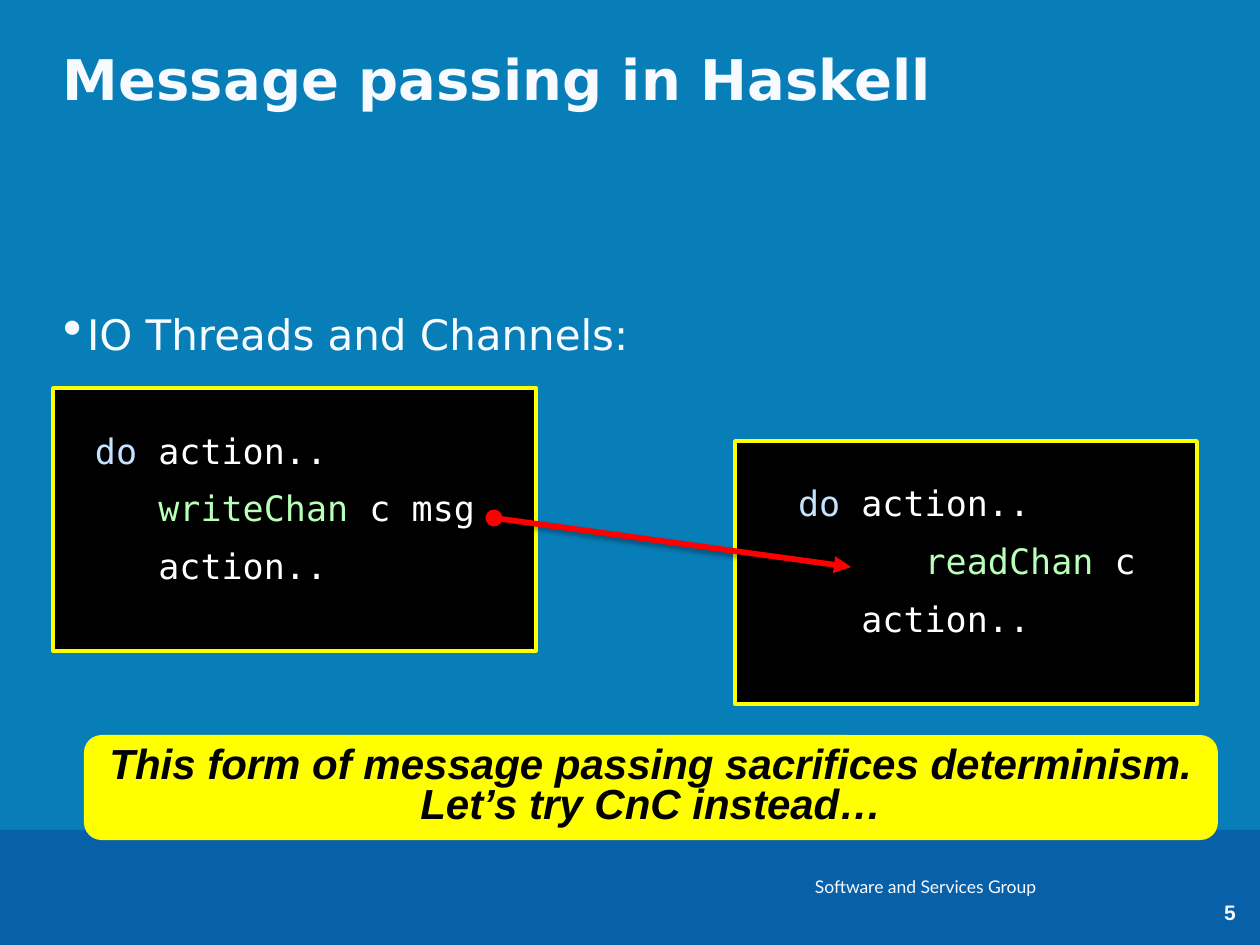
from lxml import etree
from pptx import Presentation
from pptx.dml.color import RGBColor
from pptx.enum.shapes import MSO_CONNECTOR, MSO_SHAPE
from pptx.enum.text import MSO_ANCHOR, PP_ALIGN
from pptx.oxml.ns import qn
from pptx.util import Emu, Pt

RECTANGLE, ROUNDED = MSO_SHAPE.RECTANGLE, MSO_SHAPE.ROUNDED_RECTANGLE
STRAIGHT = MSO_CONNECTOR.STRAIGHT
LEFT, CENTER = PP_ALIGN.LEFT, PP_ALIGN.CENTER
TOP, MIDDLE, BOTTOM = MSO_ANCHOR.TOP, MSO_ANCHOR.MIDDLE, MSO_ANCHOR.BOTTOM

EMU_PER_PX = 914400 / 126
SLIDE_WIDTH, SLIDE_HEIGHT = 1260, 945
COLORS = {
    "background": "087EB9", "band": "0860A8", "text": "F7FBFF",
    "black": "000000", "white": "FFFFFF", "yellow": "FFFF00",
    "red": "FF0000", "keyword": "C5E2FF", "function": "B8FFB8",
}
SANS, MONO = "DejaVu Sans", "DejaVu Sans Mono"


def px(length):
    return Emu(round(length * EMU_PER_PX))


def rgb(name):
    return RGBColor.from_string(COLORS[name])


def add_element(parent, tag, **attributes):
    element = etree.SubElement(parent, qn(tag))
    for name, value in attributes.items():
        element.set(name, str(value))
    return element


def add_box(slide, box, preset, fill, line=None):
    shape = slide.shapes.add_shape(preset, *map(px, box))
    shape.shadow.inherit = False
    shape.fill.solid()
    shape.fill.fore_color.rgb = rgb(fill)
    if line:
        shape.line.color.rgb = rgb(line)
        shape.line.width = Pt(2)
    else:
        shape.line.fill.background()
    return shape


def add_text_box(slide, box, text, **formats):
    shape = slide.shapes.add_textbox(*map(px, box))
    write_text(shape, [[(text, "text")]], **formats)
    return shape


def write_text(shape, lines, font=SANS, size=24, bold=False, italic=False,
               align=LEFT, anchor=TOP, insets=(0, 0, 0, 0), wrap=True,
               space_after=0, line_spacing=1.0, bullet_indent=0):
    """Write lines, each a list of (text, color name) runs."""
    frame = shape.text_frame
    frame.word_wrap = wrap
    frame.vertical_anchor = anchor
    (frame.margin_left, frame.margin_top,
     frame.margin_right, frame.margin_bottom) = map(px, insets)
    for index, runs in enumerate(lines):
        paragraph = frame.add_paragraph() if index else frame.paragraphs[0]
        paragraph.alignment = align
        paragraph.space_after = Pt(space_after)
        paragraph.line_spacing = line_spacing
        if bullet_indent:
            properties = paragraph._p.get_or_add_pPr()
            properties.set("marL", str(px(bullet_indent)))
            properties.set("indent", str(-px(bullet_indent)))
            add_element(properties, "a:buSzPct", val=130000)
            add_element(properties, "a:buChar", char="•")
        for text, color in runs:
            run = paragraph.add_run()
            run.text = text
            run.font.name = font
            run.font.size = Pt(size)
            run.font.bold = bold
            run.font.italic = italic
            run.font.color.rgb = rgb(color)


def add_footer(slide, box):
    left, top, width, height = box
    add_box(slide, box, RECTANGLE, "band")
    add_text_box(slide, (left + 803, top + 39, 273, 34),
                 "Software and Services Group", font="Lato", size=10,
                 insets=(12, 6, 12, 6), anchor=MIDDLE)
    add_text_box(slide, (left + width - 60, top + 22, 60, 73), "5",
                 font="Arial", size=12, bold=True, align=CENTER, anchor=BOTTOM)


def add_code_box(slide, box, left_inset, call_indent, function, arguments):
    shape = add_box(slide, box, RECTANGLE, "black", "yellow")
    lines = [
        [("do ", "keyword"), ("action..", "white")],
        [(" " * call_indent + function, "function"), (" " + arguments, "white")],
        [("   action..", "white")],
    ]
    write_text(shape, lines, font=MONO, size=20, space_after=9,
               insets=(left_inset, 41, 0, 0))


def add_message_arrow(slide, start, end):
    arrow = slide.shapes.add_connector(STRAIGHT, *map(px, start + end))
    arrow.line.color.rgb = rgb("red")
    arrow.line.width = Pt(3.25)
    line = arrow.line._get_or_add_ln()
    add_element(line, "a:headEnd", type="oval")
    add_element(line, "a:tailEnd", type="triangle")
    effects = add_element(arrow._element.spPr, "a:effectLst")
    shadow = add_element(effects, "a:outerShdw", blurRad=Pt(3.1), dist=Pt(1.6),
                         dir=90 * 60000, rotWithShape=0)
    color = add_element(shadow, "a:srgbClr", val=COLORS["black"])
    add_element(color, "a:alpha", val=38000)


def add_banner(slide, box):
    shape = add_box(slide, box, ROUNDED, "yellow")
    shape.adjustments[0] = 0.167
    lines = ["This form of message passing sacrifices determinism.",
             "Let’s try CnC instead…"]
    write_text(shape, [[(line, "black")] for line in lines], font="Arial",
               bold=True, italic=True, align=CENTER, anchor=MIDDLE,
               line_spacing=0.8, insets=(12, 6, 12, 6), wrap=False)


def main():
    presentation = Presentation()
    presentation.slide_width = px(SLIDE_WIDTH)
    presentation.slide_height = px(SLIDE_HEIGHT)
    slide = presentation.slides.add_slide(presentation.slide_layouts[6])
    slide.background.fill.solid()
    slide.background.fill.fore_color.rgb = rgb("background")

    add_footer(slide, (0, 830, SLIDE_WIDTH, 115))
    add_text_box(slide, (63, 45, 1133, 125), "Message passing in Haskell",
                 size=32, bold=True)
    add_text_box(slide, (63, 309, 1113, 60), "IO Threads and Channels:",
                 bullet_indent=24)
    add_code_box(slide, (53, 388, 483, 263), 42, 3, "writeChan", "c msg")
    add_code_box(slide, (735, 441, 462, 263), 63, 6, "readChan", "c")
    add_message_arrow(slide, (494, 518), (851, 567))
    add_banner(slide, (84, 735, 1134, 105))
    presentation.save("out.pptx")


if __name__ == "__main__":
    main()
